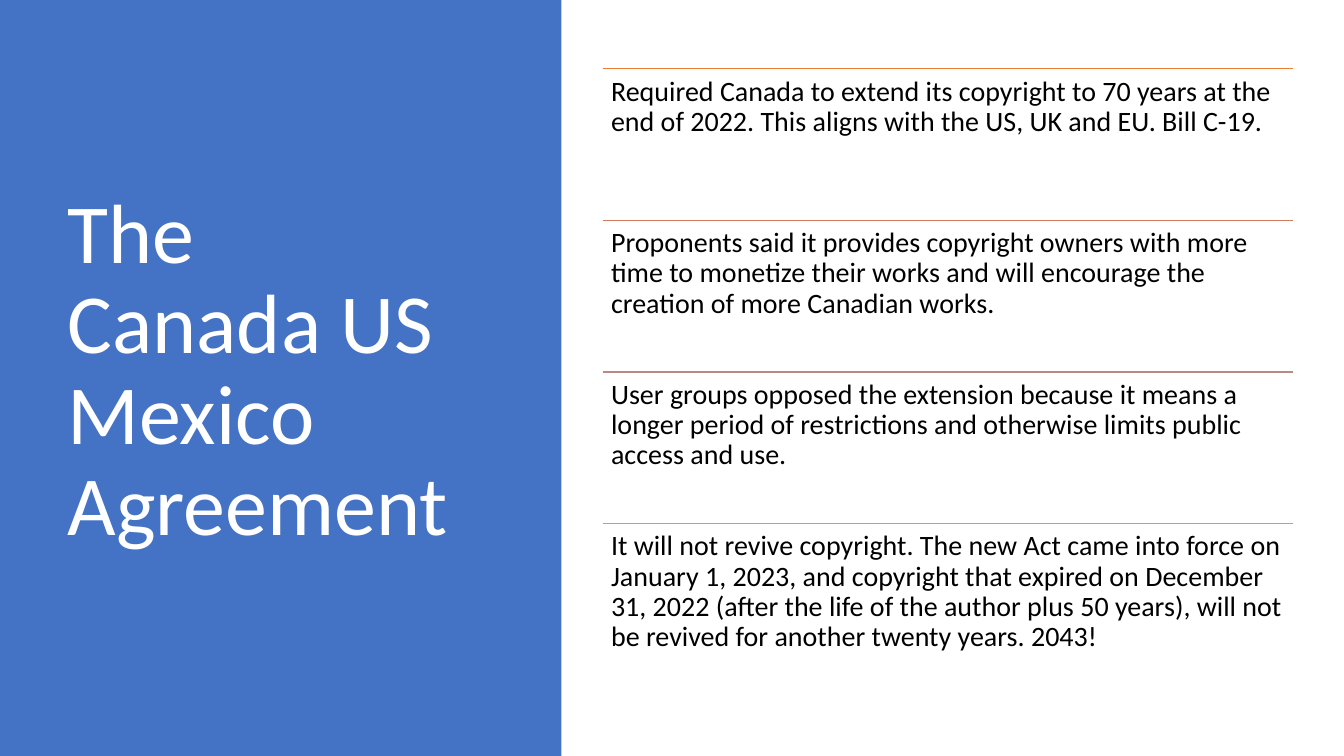
from dataclasses import dataclass

from lxml import etree
from pptx import Presentation
from pptx import util as u
from pptx.dml.color import RGBColor
from pptx.enum import shapes, text
from pptx.oxml.ns import qn


@dataclass(frozen=True)
class Theme:
    font: str = "Calibri"
    title_size: int = 60
    body_size: int = 20
    line_spacing: float = 0.9
    panel: str = "4472C4"
    title_color: str = "FFFFFF"
    body_color: str = "000000"
    rules: tuple = ("ED7D31", "D17B5C", "B98A82", "A5A5A5")


TITLE = "The Canada US Mexico Agreement"
POINTS = (
    "Required Canada to extend its copyright to 70 years at the end of 2022. "
    "This aligns with the US, UK and EU. Bill C-19.",
    "Proponents said it provides copyright owners with more time to monetize "
    "their works and will encourage the creation of more Canadian works.",
    "User groups opposed the extension because it means a longer period of "
    "restrictions and otherwise limits public access and use.",
    "It will not revive copyright. The new Act came into force on January 1, "
    "2023, and copyright that expired on December 31, 2022 (after the life of "
    "the author plus 50 years), will not be revived for another twenty years. "
    "2043!",
)
POINTS_LEFT, POINTS_TOP, POINTS_WIDTH, POINT_HEIGHT = 15.19, 1.73, 17.4, 3.82


class SlideBuilder:
    def __init__(self, slide, theme):
        self.slide = slide
        self.theme = theme

    def fill_text(self, frame, content, size, color):
        frame.word_wrap = True
        frame.auto_size = text.MSO_AUTO_SIZE.NONE
        paragraph = frame.paragraphs[0]
        paragraph.alignment = text.PP_ALIGN.LEFT
        paragraph.line_spacing = self.theme.line_spacing
        run = paragraph.add_run()
        run.text = content
        run.font.name = self.theme.font
        run.font.size = u.Pt(size)
        run.font.color.rgb = RGBColor.from_string(color)

    def panel(self, left, top, width, height):
        """Add a filled rectangle behind everything else."""
        shape = self.slide.shapes.add_shape(
            shapes.MSO_SHAPE.RECTANGLE,
            u.Cm(left), u.Cm(top), u.Cm(width), u.Cm(height))
        shape.shadow.inherit = False
        shape.fill.solid()
        shape.fill.fore_color.rgb = RGBColor.from_string(self.theme.panel)
        shape.line.fill.background()
        self.slide.shapes.element.insert(2, shape.element)

    def title(self, content, left, top, width, height):
        shape = self.slide.shapes.title
        shape.left, shape.top = u.Cm(left), u.Cm(top)
        shape.width, shape.height = u.Cm(width), u.Cm(height)
        shape.text_frame.vertical_anchor = text.MSO_ANCHOR.MIDDLE
        self.fill_text(shape.text_frame, content,
                       self.theme.title_size, self.theme.title_color)

    def rule(self, left, top, width, color):
        connector = self.slide.shapes.add_connector(
            shapes.MSO_CONNECTOR.STRAIGHT,
            u.Cm(left), u.Cm(top), u.Cm(left + width), u.Cm(top))
        connector.line.color.rgb = RGBColor.from_string(color)
        connector.line.width = u.Pt(1)
        etree.SubElement(connector.element.spPr, qn("a:effectLst"))

    def point(self, content, left, top, width, height):
        shape = self.slide.shapes.add_textbox(
            u.Cm(left), u.Cm(top), u.Cm(width), u.Cm(height))
        frame = shape.text_frame
        frame.margin_left = frame.margin_right = u.Cm(0.21)
        frame.margin_top = frame.margin_bottom = u.Cm(0.21)
        self.fill_text(frame, content,
                       self.theme.body_size, self.theme.body_color)


def main():
    presentation = Presentation()
    presentation.slide_width = u.Cm(33.87)
    presentation.slide_height = u.Cm(19.05)
    title_only = presentation.slide_layouts[5]
    theme = Theme()
    builder = SlideBuilder(presentation.slides.add_slide(title_only), theme)

    builder.panel(0, 0, 14.15, 19.05)
    builder.title(TITLE, 1.45, 1.73, 10.57, 15.29)
    for index, (content, color) in enumerate(zip(POINTS, theme.rules)):
        top = POINTS_TOP + index * POINT_HEIGHT
        builder.rule(POINTS_LEFT, top, POINTS_WIDTH, color)
        builder.point(content, POINTS_LEFT, top, POINTS_WIDTH, POINT_HEIGHT)

    presentation.save("out.pptx")


if __name__ == "__main__":
    main()
